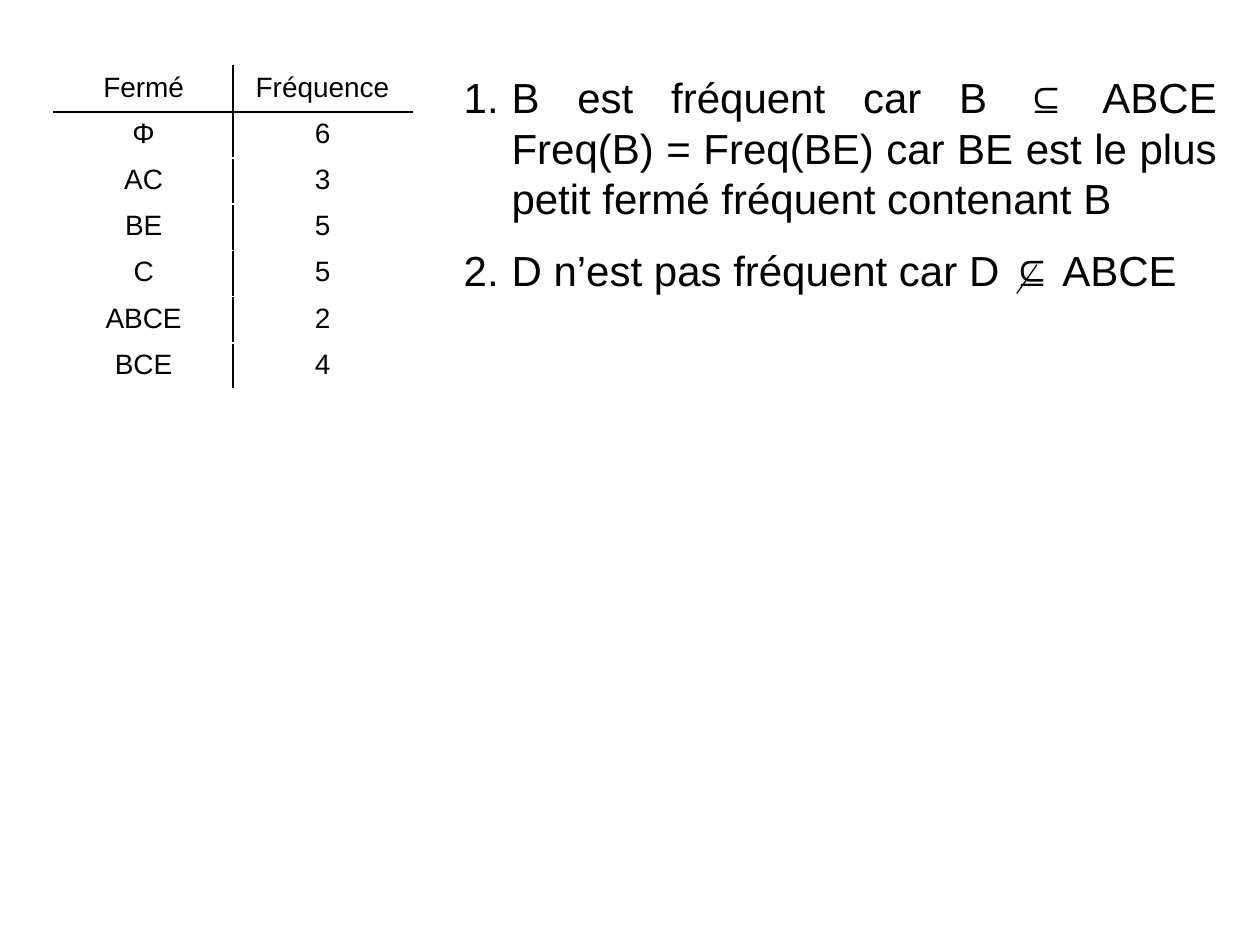
"""Build a slide with a table of closed itemsets and two numbered deductions."""
from typing import NamedTuple

import lxml.etree
import pptx
import pptx.dml.color
import pptx.enum.shapes
import pptx.enum.text
import pptx.oxml.ns
import pptx.util

Inches = pptx.util.Inches
Pt = pptx.util.Pt
qn = pptx.oxml.ns.qn
BLACK = pptx.dml.color.RGBColor(0, 0, 0)
FONT_NAME = "Arial"
TOP = Inches(0.52)


class Itemset(NamedTuple):
    closed: str
    frequency: str


HEADER = Itemset("Fermé", "Fréquence")
ITEMSETS = [
    Itemset("Φ", "6"),
    Itemset("AC", "3"),
    Itemset("BE", "5"),
    Itemset("C", "5"),
    Itemset("ABCE", "2"),
    Itemset("BCE", "4"),
]
DEDUCTIONS = [
    "B est fréquent car B ⊆ ABCE\vFreq(B) = Freq(BE) car BE est le plus "
    "petit fermé fréquent contenant B",
    "D n’est pas fréquent car D ⊆ ABCE",
]


def format_runs(paragraph, size: int) -> None:
    for run in paragraph.runs:
        run.font.name = FONT_NAME
        run.font.size = Pt(size)
        run.font.color.rgb = BLACK


def add_border(cell, side: str) -> None:
    properties = cell._tc.get_or_add_tcPr()
    line = lxml.etree.SubElement(properties, qn(f"a:ln{side}"), w=str(Pt(1)))
    fill = lxml.etree.SubElement(line, qn("a:solidFill"))
    lxml.etree.SubElement(fill, qn("a:srgbClr"), val=str(BLACK))


def add_itemset_table(slide) -> None:
    rows = [HEADER, *ITEMSETS]
    table = slide.shapes.add_table(
        len(rows), 2, Inches(0.43), TOP, Inches(2.84), Inches(2.57)
    ).table
    table.first_row = False
    table.horz_banding = False
    for row_index, itemset in enumerate(rows):
        for column_index, text in enumerate(itemset):
            cell = table.cell(row_index, column_index)
            cell.text_frame.text = text
            paragraph = cell.text_frame.paragraphs[0]
            paragraph.alignment = pptx.enum.text.PP_ALIGN.CENTER
            format_runs(paragraph, 16)
            add_border(cell, "R" if column_index == 0 else "L")
            if row_index == 0:
                add_border(cell, "B")
            elif row_index == 1:
                add_border(cell, "T")
            cell.fill.background()


def number_paragraph(paragraph) -> None:
    properties = paragraph._p.get_or_add_pPr()
    properties.set("marL", str(Inches(0.38)))
    properties.set("indent", str(Inches(-0.38)))
    lxml.etree.SubElement(properties, qn("a:buFont"), typeface=FONT_NAME)
    lxml.etree.SubElement(properties, qn("a:buAutoNum"), type="arabicPeriod")


def fill_deductions(body) -> None:
    body.left, body.top = Inches(3.58), TOP
    body.width, body.height = Inches(6.18), Inches(1.9)
    frame = body.text_frame
    frame.text = "\n".join(DEDUCTIONS)
    frame.word_wrap = True
    frame.auto_size = pptx.enum.text.MSO_AUTO_SIZE.SHAPE_TO_FIT_TEXT
    for paragraph in frame.paragraphs:
        paragraph.alignment = pptx.enum.text.PP_ALIGN.JUSTIFY
        paragraph.space_before = Pt(12)
        number_paragraph(paragraph)
        format_runs(paragraph, 24)


def add_negation_stroke(slide) -> None:
    stroke = slide.shapes.add_connector(
        pptx.enum.shapes.MSO_CONNECTOR.STRAIGHT,
        Inches(8.07), Inches(2.33), Inches(8.23), Inches(2.1),
    )
    stroke.line.color.rgb = BLACK
    stroke.line.width = Pt(0.75)
    lxml.etree.SubElement(stroke._element.spPr, qn("a:effectLst"))


def main() -> None:
    presentation = pptx.Presentation()
    presentation.slide_width = Inches(10)
    presentation.slide_height = Inches(7.5)
    slide = presentation.slides.add_slide(presentation.slide_layouts[1])
    title = slide.shapes.title._element
    title.getparent().remove(title)
    add_itemset_table(slide)
    fill_deductions(slide.placeholders[1])
    add_negation_stroke(slide)
    presentation.save("out.pptx")


if __name__ == "__main__":
    main()
